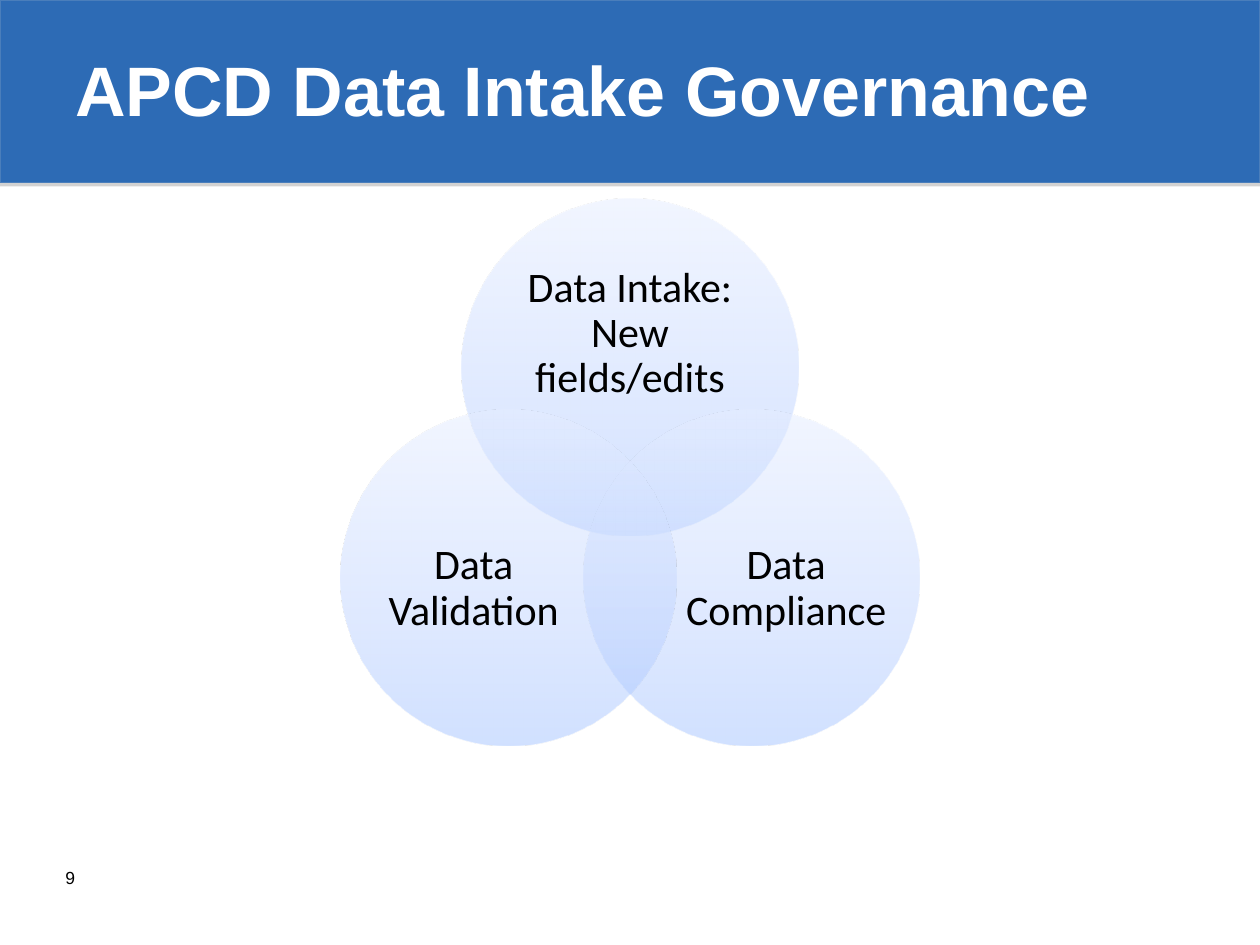
import math
from dataclasses import dataclass

import pptx
import pptx.dml.color
import pptx.enum.shapes
import pptx.enum.text
import pptx.oxml
import pptx.oxml.ns
import pptx.util

PP_ALIGN = pptx.enum.text.PP_ALIGN
ANCHOR = pptx.enum.text.MSO_ANCHOR
SHAPE = pptx.enum.shapes.MSO_SHAPE

# The slide is a grid of 100 columns by 75 rows of square cells
COLS, ROWS = 100, 75
CELL = pptx.util.Inches(0.1)

# Venn geometry in grid cells
VENN_X, VENN_Y = 50, 40.27
RING, DIAMETER = 11.14, 26.7
STOPS = ((0, "A4C4FF"), (35, "BFD4FF"), (100, "E6EEFF"))
OPACITY = 50


@dataclass(frozen=True)
class Box:
    col: float
    row: float
    cols: float
    rows: float

    def emu(self) -> list[int]:
        return [round(n * CELL) for n in (self.col, self.row, self.cols, self.rows)]


@dataclass(frozen=True)
class VennSet:
    text: str
    angle: float
    label: Box


VENN_SETS = (
    VennSet("Data Intake: New fields/edits", -90, Box(40.2, 20.5, 19.6, 12)),
    VennSet("Data Compliance", 30, Box(54.4, 39.4, 16, 14.7)),
    VennSet("Data Validation", 150, Box(29.6, 39.4, 16, 14.7)),
)
TITLE_FONT = {"name": "Arial", "size": pptx.util.Pt(40), "bold": True}
NUMBER_FONT = {"name": "Arial", "size": pptx.util.Pt(10)}
LABEL_FONT = {"name": "Calibri", "size": pptx.util.Pt(24)}
LABEL_FRAME = dict.fromkeys(
    ("margin_left", "margin_top", "margin_right", "margin_bottom"), 0)
LABEL_PARAGRAPH = {"alignment": PP_ALIGN.CENTER, "line_spacing": 0.9}


def rgb(value: str) -> pptx.dml.color.RGBColor:
    return pptx.dml.color.RGBColor.from_string(value)


def apply(target, values: dict) -> None:
    for name, value in values.items():
        setattr(target, name, value)


def fragment(xml: str):
    """Parse an element that uses the drawing namespace."""
    return pptx.oxml.parse_xml(xml.replace(">", " " + pptx.oxml.ns.nsdecls("a") + ">", 1))


def color_xml(value: str, opacity: int) -> str:
    return f'<a:srgbClr val="{value}"><a:alpha val="{opacity * 1000}"/></a:srgbClr>'


def add_text(s, box: Box, text: str, font: dict, color: str = "000000",
             anchor=ANCHOR.MIDDLE, frame: dict | None = None,
             paragraph: dict | None = None) -> None:
    tf = s.shapes.add_textbox(*box.emu()).text_frame
    apply(tf, {"word_wrap": True, "vertical_anchor": anchor, **(frame or {})})
    p = tf.paragraphs[0]
    apply(p, paragraph or {})
    r = p.add_run()
    r.text = text
    apply(r.font, font)
    r.font.color.rgb = rgb(color)


def add_banner(s, box: Box) -> None:
    sp = s.shapes.add_shape(SHAPE.RECTANGLE, *box.emu())
    sp.fill.solid()
    sp.fill.fore_color.rgb = rgb("2D6BB5")
    sp.line.color.rgb = rgb("4A7EBB")
    sp.line.width = pptx.util.Pt(0.75)
    # Thin shadow straight below the banner
    sp._element.spPr.append(fragment(
        f'<a:effectLst><a:outerShdw blurRad="0" dist="{pptx.util.Pt(1.8)}" '
        f'dir="5400000" rotWithShape="0">{color_xml("808080", 35)}'
        '</a:outerShdw></a:effectLst>'))


def add_circle(s, angle: float) -> None:
    x = VENN_X + RING * math.cos(math.radians(angle))
    y = VENN_Y + RING * math.sin(math.radians(angle))
    box = Box(x - DIAMETER / 2, y - DIAMETER / 2, DIAMETER, DIAMETER)
    sp = s.shapes.add_shape(SHAPE.OVAL, *box.emu())
    sp.shadow.inherit = False
    sp.line.fill.background()
    # Translucent gradient running from bottom to top
    stops = "".join(f'<a:gs pos="{pos * 1000}">{color_xml(value, OPACITY)}</a:gs>'
                    for pos, value in STOPS)
    sp._element.spPr.prstGeom.addnext(fragment(
        f'<a:gradFill><a:gsLst>{stops}</a:gsLst>'
        '<a:lin ang="16200000" scaled="0"/></a:gradFill>'))


def main() -> None:
    prs = pptx.Presentation()
    prs.slide_width, prs.slide_height = COLS * CELL, ROWS * CELL
    s = prs.slides.add_slide(prs.slide_layouts[6])

    # Banner, title and slide number
    add_banner(s, Box(0, 0, COLS, 14.5))
    add_text(s, Box(5, 0.8, 90, 12.5), "APCD Data Intake Governance",
             TITLE_FONT, "FFFFFF")
    add_text(s, Box(4.2, 68.3, 23.3, 4), "9", NUMBER_FONT, anchor=ANCHOR.TOP)

    # Venn diagram
    for item in VENN_SETS:
        add_circle(s, item.angle)
        add_text(s, item.label, item.text, LABEL_FONT,
                 frame=LABEL_FRAME, paragraph=LABEL_PARAGRAPH)

    prs.save("out.pptx")


if __name__ == "__main__":
    main()
